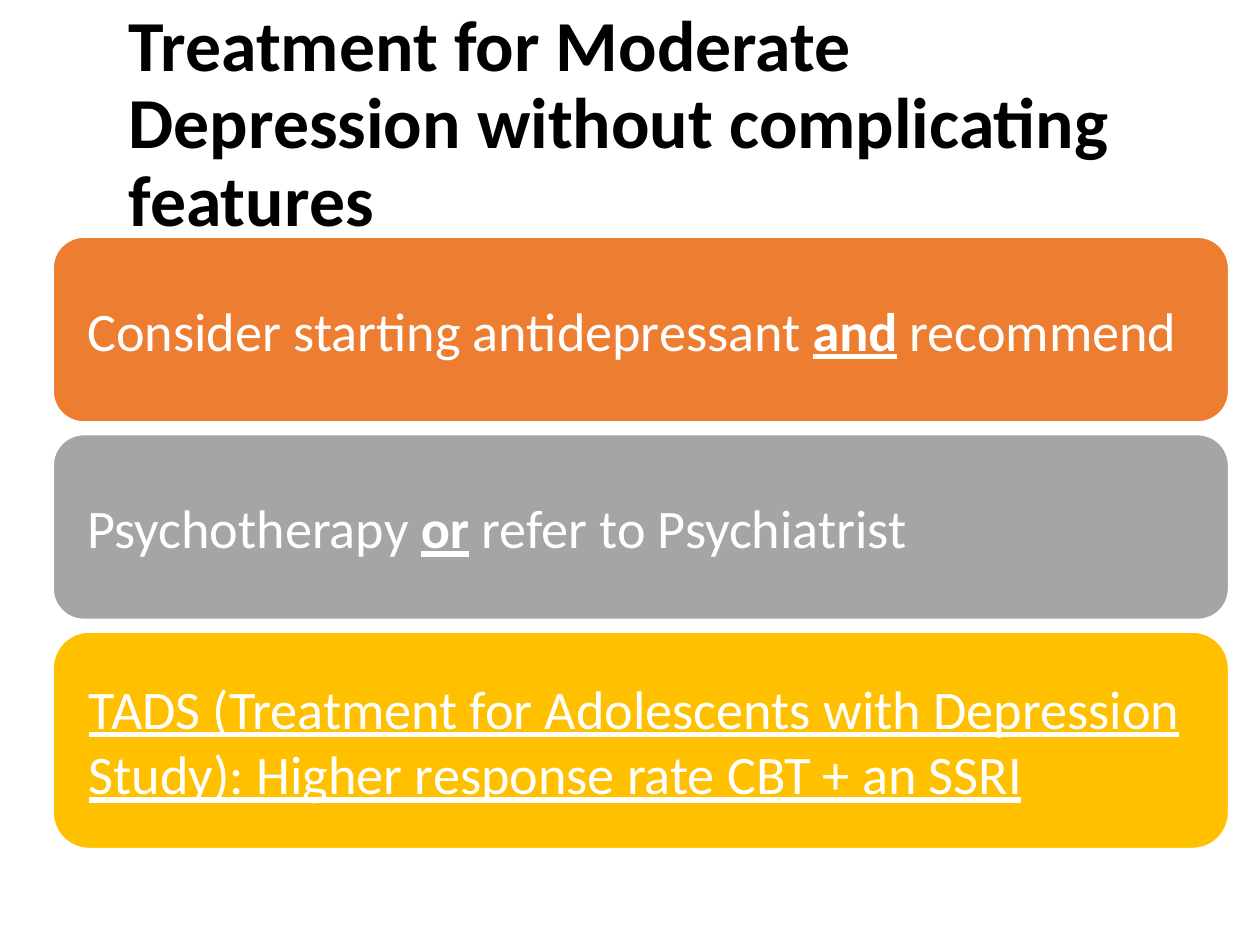
from pptx import Presentation
from pptx.dml.color import RGBColor
from pptx.enum.shapes import MSO_SHAPE
from pptx.enum.text import MSO_ANCHOR, MSO_AUTO_SIZE, PP_ALIGN
from pptx.util import Cm, Pt

HUES = {
    "black": "000000",
    "white": "FFFFFF",
    "orange": "ED7D31",
    "gray": "A5A5A5",
    "gold": "FFC000",
}
LEFT, TOP, WIDTH, GAP = 1.07, 4.78, 23.7, 0.25
INSET = 0.51
CARDS = [
    ("orange", 3.73, [
        ("Consider starting antidepressant ", False, False),
        ("and", True, True),
        (" recommend", False, False),
    ]),
    ("gray", 3.73, [
        ("Psychotherapy ", False, False),
        ("or", True, True),
        (" refer to Psychiatrist", False, False),
    ]),
    ("gold", 4.37, [
        ("TADS (Treatment for Adolescents with Depression Study): "
         "Higher response rate CBT + an SSRI", False, True),
    ]),
]


def get_hue(name):
    """Return the named colour."""
    return RGBColor.from_string(HUES[name])


def add_run(para, text, size, hue, bold=False, under=False):
    """Append one formatted run to a paragraph."""
    run = para.add_run()
    run.text = text
    font = run.font
    font.name = "Calibri"
    font.size = Pt(size)
    font.bold = bold
    font.underline = under
    font.color.rgb = get_hue(hue)


def set_frame(frame):
    """Wrap and centre a frame vertically and return its left-aligned paragraph."""
    frame.auto_size = MSO_AUTO_SIZE.NONE
    frame.word_wrap = True
    frame.vertical_anchor = MSO_ANCHOR.MIDDLE
    para = frame.paragraphs[0]
    para.alignment = PP_ALIGN.LEFT
    return para


def add_title(slide, text):
    """Place and fill the title placeholder."""
    title = slide.shapes.title
    title.left, title.top = Cm(2.34), Cm(0.46)
    title.width, title.height = Cm(21.89), Cm(4.14)
    para = set_frame(title.text_frame)
    para.line_spacing = 0.9
    add_run(para, text, 41, "black", bold=True)


def add_card(slide, top, height, hue, runs):
    """Add one rounded card with its text."""
    card = slide.shapes.add_shape(
        MSO_SHAPE.ROUNDED_RECTANGLE, Cm(LEFT), Cm(top), Cm(WIDTH), Cm(height))
    card.shadow.inherit = False
    card.fill.solid()
    card.fill.fore_color.rgb = get_hue(hue)
    card.line.color.rgb = get_hue("white")
    card.line.width = Pt(1)
    frame = card.text_frame
    frame.margin_left = frame.margin_right = Cm(INSET)
    para = set_frame(frame)
    for text, bold, under in runs:
        add_run(para, text, 31, "white", bold, under)


def main():
    """Build and save the slide."""
    deck = Presentation()
    deck.slide_width, deck.slide_height = Cm(25.4), Cm(19.05)
    slide = deck.slides.add_slide(deck.slide_layouts[5])
    add_title(slide, "Treatment for Moderate Depression without complicating features")
    top = TOP
    for hue, height, runs in CARDS:
        add_card(slide, top, height, hue, runs)
        top += height + GAP
    deck.save("out.pptx")


if __name__ == "__main__":
    main()
